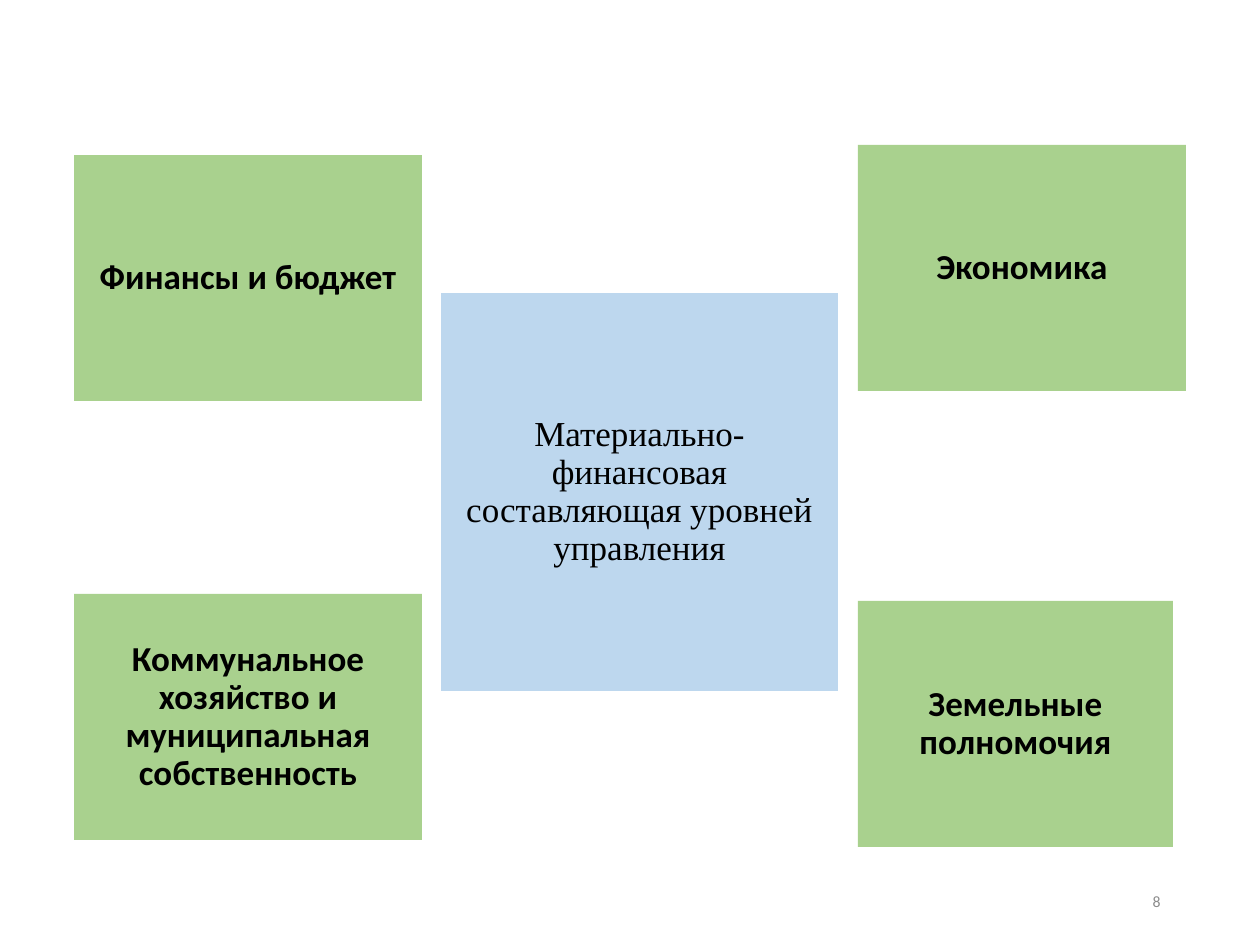
from dataclasses import dataclass

from pptx import Presentation
from pptx.dml.color import RGBColor
from pptx.enum.shapes import MSO_SHAPE as Shape
from pptx.enum.text import MSO_ANCHOR as Anchor, PP_ALIGN as Align
from pptx.util import Emu, Inches, Pt

PX_PER_INCH = 126


@dataclass(frozen=True)
class Theme:
    topic_fill: str = "A9D18E"
    center_fill: str = "BDD7EE"
    text: str = "000000"
    muted: str = "8C8C8C"
    sans: str = "Calibri"
    serif: str = "Times New Roman"
    body_size: int = 20
    number_size: int = 9


THEME = Theme()

# Topic boxes: left, top, width, text
TOPIC_HEIGHT = 246
TOPICS = [
    (74, 155, 348, "Финансы и бюджет"),
    (858, 145, 328, "Экономика"),
    (74, 594, 348, "Коммунальное хозяйство и муниципальная собственность"),
    (858, 601, 315, "Земельные полномочия"),
]


def px(n):
    return Emu(round(n * Inches(1) / PX_PER_INCH))


def set_text(sp, text, *, font=THEME.sans, size=THEME.body_size,
             color=THEME.text, bold=False, align=Align.CENTER, spacing=0.9):
    tf = sp.text_frame
    tf.word_wrap = True
    tf.vertical_anchor = Anchor.MIDDLE
    p = tf.paragraphs[0]
    p.alignment = align
    p.line_spacing = spacing
    r = p.add_run()
    r.text = text
    r.font.name = font
    r.font.size = Pt(size)
    r.font.bold = bold
    r.font.color.rgb = RGBColor.from_string(color)


def add_box(slide, box, text, fill, **fmt):
    sp = slide.shapes.add_shape(Shape.RECTANGLE, *map(px, box))
    sp.shadow.inherit = False
    sp.fill.solid()
    sp.fill.fore_color.rgb = RGBColor.from_string(fill)
    sp.line.fill.background()
    set_text(sp, text, **fmt)


def add_label(slide, box, text, **fmt):
    sp = slide.shapes.add_textbox(*map(px, box))
    set_text(sp, text, **fmt)


def main():
    prs = Presentation()
    prs.slide_width, prs.slide_height = Inches(10), Inches(7.5)
    slide = prs.slides.add_slide(prs.slide_layouts[6])

    # Slide number
    add_label(slide, (890, 876, 283, 50), "8", size=THEME.number_size,
              color=THEME.muted, align=Align.RIGHT, spacing=1.0)

    # Central theme
    add_box(slide, (441, 293, 397, 398),
            "Материально-финансовая составляющая уровней управления",
            THEME.center_fill, font=THEME.serif)

    # Topics around it
    for left, top, width, text in TOPICS:
        add_box(slide, (left, top, width, TOPIC_HEIGHT), text,
                THEME.topic_fill, bold=True)

    prs.save("out.pptx")


if __name__ == "__main__":
    main()
